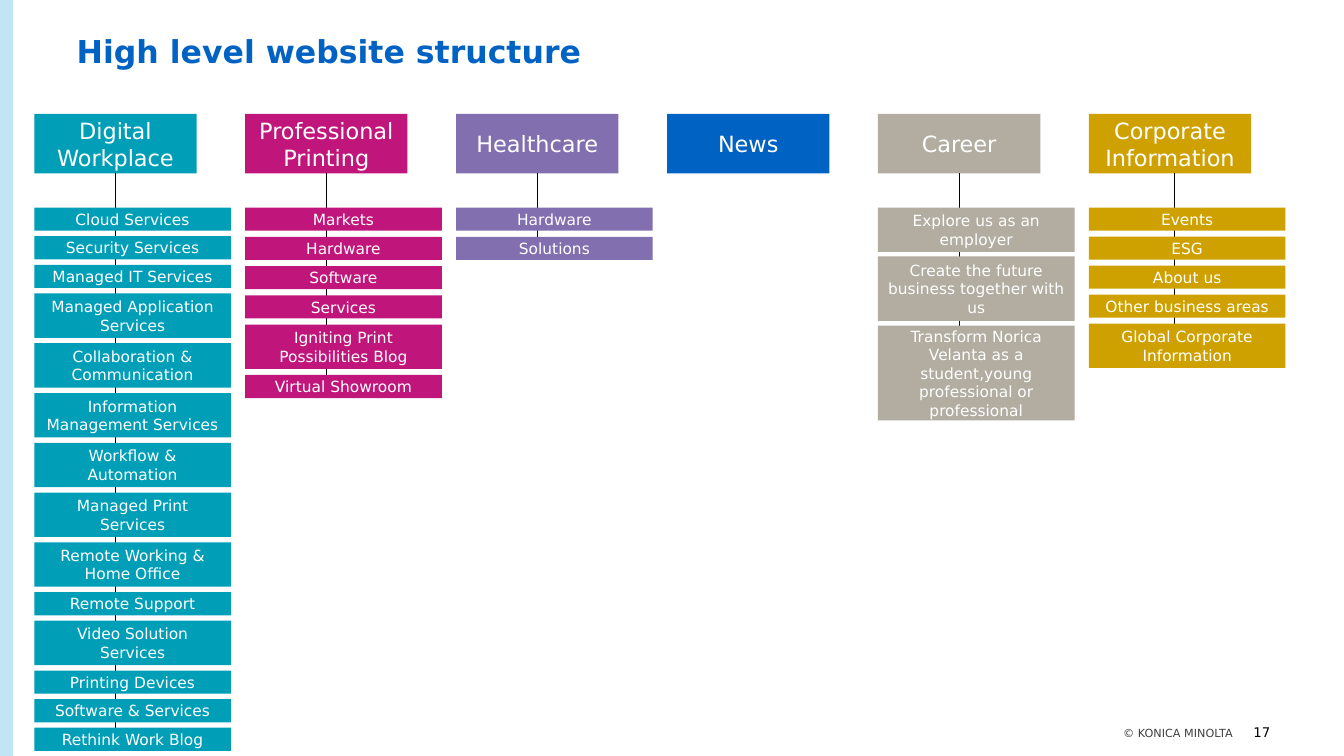
import pptx
import pptx.util
import pptx.dml.color
import pptx.enum.shapes
import pptx.enum.text
import pptx.oxml

FONT = "DejaVu Sans"
WIDTH, HEIGHT = 13.33, 7.5
LEFT, PITCH = 0.34, 2.092
HEADER_TOP, HEADER_WIDTH, HEADER_HEIGHT = 1.13, 1.61, 0.59
ITEMS_TOP, ITEM_WIDTH = 2.06, 1.95
ITEM_HEIGHTS = {1: 0.23, 2: 0.44, 3: 0.64, 5: 0.94}

# heading, colour, bottom of the stack, shift of the line, (entry, lines of text)
SECTIONS = [
    ("Digital Workplace", "009EB7", 7.45, 0, [
        ("Cloud Services", 1), ("Security Services", 1), ("Managed IT Services", 1),
        ("Managed Application Services", 2), ("Collaboration & Communication", 2),
        ("Information Management Services", 2), ("Workflow & Automation", 2),
        ("Managed Print Services", 2), ("Remote Working & Home Office", 2),
        ("Remote Support", 1), ("Video Solution Services", 2), ("Printing Devices", 1),
        ("Software & Services", 1), ("Rethink Work Blog", 1)]),
    ("Professional Printing", "C0167B", 3.95, 0, [
        ("Markets", 1), ("Hardware", 1), ("Software", 1), ("Services", 1),
        ("Igniting Print Possibilities Blog", 2), ("Virtual Showroom", 1)]),
    ("Healthcare", "826FB0", 2.58, 0, [("Hardware", 1), ("Solutions", 1)]),
    ("News", "0062C2", ITEMS_TOP, 0, []),
    ("Career", "B2ACA1", 4.17, 0, [
        ("Explore us as an employer", 2),
        ("Create the future business together with us", 3),
        ("Transform Norica Velanta as a student,young professional or professional", 5)]),
    ("Corporate Information", "CEA100", 3.65, 0.04, [
        ("Events", 1), ("ESG", 1), ("About us", 1), ("Other business areas", 1),
        ("Global Corporate Information", 2)]),
]


def colour(value):
    return pptx.dml.color.RGBColor.from_string(value)


def inches(*lengths):
    return [pptx.util.Inches(length) for length in lengths]


def write(shape, text, size, ink, align, anchor, bold=False):
    frame = shape.text_frame
    frame.word_wrap = True
    frame.vertical_anchor = anchor
    paragraph = frame.paragraphs[0]
    paragraph.text = text
    paragraph.alignment = align
    paragraph.font.name = FONT
    paragraph.font.size = pptx.util.Pt(size)
    paragraph.font.bold = bold
    paragraph.font.color.rgb = colour(ink)
    return paragraph


def add_label(slide, box, *style):
    label = slide.shapes.add_textbox(*inches(*box))
    frame = label.text_frame
    frame.margin_left = frame.margin_right = frame.margin_top = frame.margin_bottom = 0
    return write(label, *style)


def add_block(slide, box, fill, text="", size=11):
    block = slide.shapes.add_shape(pptx.enum.shapes.MSO_SHAPE.RECTANGLE, *inches(*box))
    block.shadow.inherit = False
    block.fill.solid()
    block.fill.fore_color.rgb = colour(fill)
    block.line.fill.background()
    if text:
        write(block, text, size, "FFFFFF", pptx.enum.text.PP_ALIGN.CENTER,
              pptx.enum.text.MSO_ANCHOR.MIDDLE)
    return block


def add_trunk(slide, header, x, top, bottom, joined):
    trunk = slide.shapes.add_connector(
        pptx.enum.shapes.MSO_CONNECTOR.STRAIGHT, *inches(x, top, x, bottom))
    if joined:
        trunk.begin_connect(header, 2)
    trunk.line.color.rgb = colour("000000")
    trunk.line.width = pptx.util.Pt(0.5)
    trunk._element.spPr.append(pptx.oxml.parse_xml(
        '<a:effectLst xmlns:a="http://schemas.openxmlformats.org/drawingml/2006/main"/>'))


def add_section(slide, column, heading, fill, bottom, shift, items):
    left = LEFT + column * PITCH
    header = add_block(slide, (left, HEADER_TOP, HEADER_WIDTH, HEADER_HEIGHT), fill, heading, 16)
    if not items:
        return
    heights = [ITEM_HEIGHTS[lines] for _, lines in items]
    gap = (bottom - ITEMS_TOP - sum(heights)) / (len(items) - 1)
    add_trunk(slide, header, left + HEADER_WIDTH / 2 + shift, HEADER_TOP + HEADER_HEIGHT,
              bottom - heights[-1] / 2, not shift)
    top = ITEMS_TOP
    for (text, _), height in zip(items, heights):
        add_block(slide, (left, top, ITEM_WIDTH, height), fill, text)
        top += height + gap


def main():
    """Build the website structure slide."""
    presentation = pptx.Presentation()
    presentation.slide_width, presentation.slide_height = inches(WIDTH, HEIGHT)
    slide = presentation.slides.add_slide(presentation.slide_layouts[6])
    align, anchor = pptx.enum.text.PP_ALIGN, pptx.enum.text.MSO_ANCHOR
    add_block(slide, (0, 0, 0.13, HEIGHT), "C1E5F4")
    title = add_label(slide, (0.76, 0.36, 10.61, 0.35), "High level website structure",
                      22.5, "0062C2", align.LEFT, anchor.TOP, True)
    title.line_spacing = 0.9
    add_label(slide, (12.23, 7.18, 0.37, 0.16), "17", 9.5, "000000", align.RIGHT, anchor.BOTTOM)
    add_label(slide, (7.11, 7.21, 5.12, 0.13), "© KONICA MINOLTA", 8, "404040",
              align.RIGHT, anchor.BOTTOM)
    for column, section in enumerate(SECTIONS):
        add_section(slide, column, *section)
    presentation.save("out.pptx")


if __name__ == "__main__":
    main()
